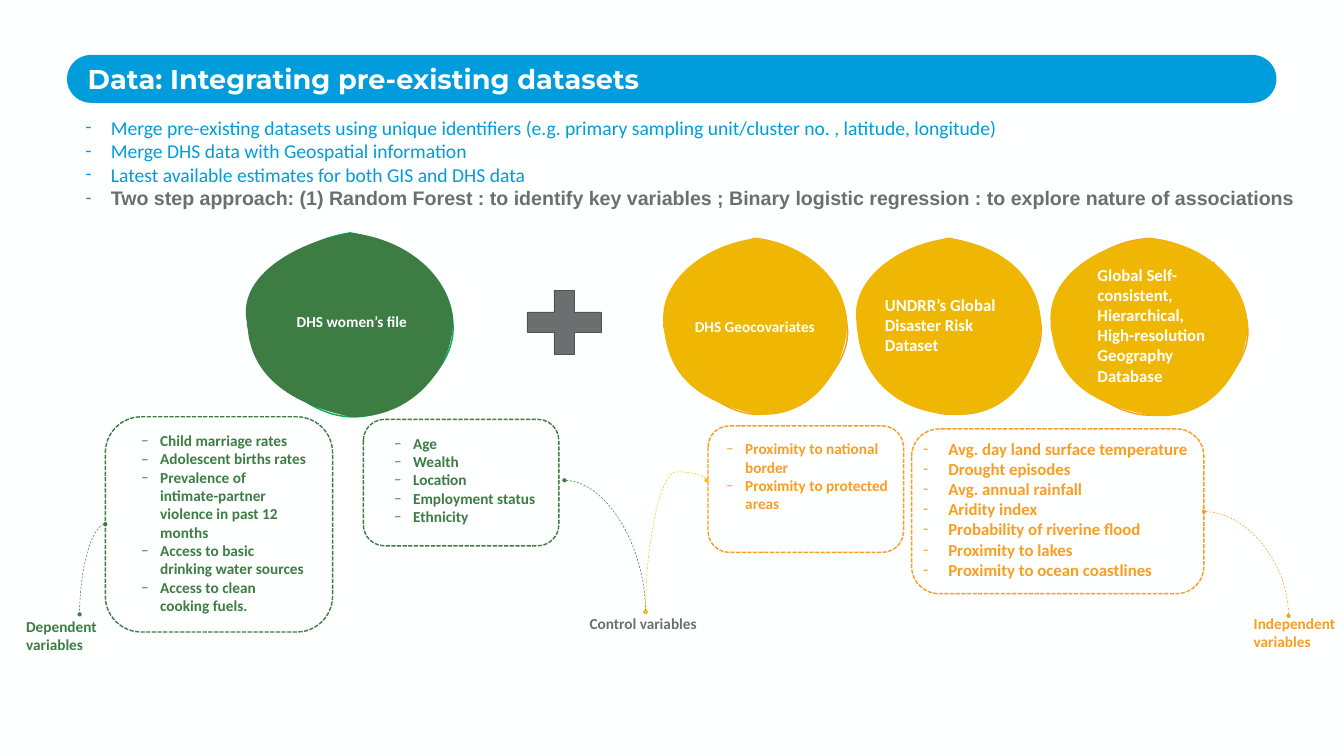
"""Build the slide on integrating survey and geospatial datasets."""
from dataclasses import dataclass
from typing import NamedTuple, Optional

import lxml.etree
import pptx
import pptx.dml.color
import pptx.enum.dml
import pptx.enum.shapes
import pptx.oxml.ns
import pptx.util

PX = 9144
SHAPES = pptx.enum.shapes.MSO_SHAPE
DASHES = pptx.enum.dml.MSO_LINE


@dataclass(frozen=True)
class Theme:
    white: str = "FEFFFF"
    blue: str = "009CDB"
    grey: str = "6D6E70"
    plus_edge: str = "525254"
    green: str = "3D7D43"
    green_edge: str = "00B050"
    yellow: str = "EFB703"
    orange: str = "FC9D23"
    gold: str = "FFC000"
    font: str = "Calibri"
    title: float = 38.8
    intro: float = 28
    large: float = 24
    label: float = 21.8


THEME = Theme()


class Box(NamedTuple):
    left: int
    top: int
    width: int
    height: int


class Style(NamedTuple):
    size: float
    color: str
    font: str = THEME.font
    bold: bool = True


class Bullet(NamedTuple):
    character: str
    margin: int
    hanging: int


class Line(NamedTuple):
    text: str
    style: Style


class TextBlock(NamedTuple):
    box: Box
    lines: tuple[Line, ...]
    bullet: Optional[Bullet] = None
    inset: tuple[int, int] = (10, 5)
    fill: Optional[str] = None


class Blob(NamedTuple):
    outline: tuple[tuple[int, int], ...]
    body: tuple[tuple[int, int], ...]
    fill: str
    edge: str
    label: TextBlock


class Panel(NamedTuple):
    box: Box
    color: str
    content: TextBlock


class Curve(NamedTuple):
    begin: tuple[int, int]
    end: tuple[int, int]
    color: str
    preset: str = "curvedConnector2"
    rotation: int = 0
    adjustment: Optional[int] = None


def lines(style: Style, *texts: str) -> tuple[Line, ...]:
    return tuple(Line(text, style) for text in texts)


GREEN_LABEL = Style(THEME.label, THEME.green)
ORANGE_LABEL = Style(THEME.label, THEME.orange)
WHITE_LABEL = Style(THEME.label, THEME.white)
WHITE_LARGE = Style(THEME.large, THEME.white)
INTRO = Style(THEME.intro, THEME.blue, bold=False)
EN_DASH = Bullet("–", 38, 38)

TITLE_BAR = Box(133, 109, 2400, 95)
PLUS_SIGN = Box(1019, 553, 201, 172)

TEXTS = (
    TextBlock(Box(174, 123, 2322, 65), lines(Style(THEME.title, THEME.white, "Montserrat"),
              "Data: Integrating pre-existing datasets"), inset=(0, 0)),
    TextBlock(Box(170, 229, 2438, 471), lines(INTRO,
              "Merge pre-existing datasets using unique identifiers (e.g. primary sampling unit/cluster no. , latitude, longitude)",
              "Merge DHS data with Geospatial information",
              "Latest available estimates for both GIS and DHS data")
              + lines(Style(THEME.intro, THEME.grey, "Arial"),
              "Two step approach: (1) Random Forest : to identify key variables ; Binary logistic regression : to explore nature of associations"),
              Bullet("-", 50, 50), (0, 0)),
    TextBlock(Box(42, 1219, 233, 84), lines(GREEN_LABEL, "Dependent variables")),
    TextBlock(Box(1160, 1214, 243, 47), lines(Style(THEME.label, THEME.grey), "Control variables")),
    TextBlock(Box(2478, 1213, 189, 84), lines(ORANGE_LABEL, "Independent variables")),
)

BLOBS = (
    Blob(((491, 644), (518, 545), (592, 478), (695, 462), (810, 483), (896, 553), (899, 644),
          (906, 737), (785, 832), (695, 827), (606, 824), (513, 731), (491, 644)),
         ((491, 644), (465, 544), (599, 477), (695, 462), (814, 474), (900, 556), (899, 644),
          (894, 737), (813, 832), (695, 827), (589, 804), (496, 754), (491, 644)),
         THEME.green, THEME.green_edge,
         TextBlock(Box(579, 615, 312, 53), lines(WHITE_LABEL, "DHS women’s file"), fill=THEME.green)),
    Blob(((1317, 647), (1336, 552), (1411, 494), (1499, 473), (1601, 484), (1677, 564), (1681, 647),
          (1694, 728), (1584, 826), (1499, 822), (1421, 819), (1337, 730), (1317, 647)),
         ((1317, 647), (1304, 551), (1409, 483), (1499, 473), (1605, 484), (1682, 559), (1681, 647),
          (1676, 735), (1610, 834), (1499, 822), (1405, 799), (1327, 763), (1317, 647)),
         THEME.yellow, THEME.orange,
         TextBlock(Box(1369, 624, 310, 47), lines(WHITE_LABEL, "DHS Geocovariates"), fill=THEME.yellow)),
    Blob(((1701, 647), (1709, 551), (1793, 490), (1883, 473), (1986, 489), (2059, 573), (2066, 647),
          (2072, 735), (1973, 824), (1883, 822), (1803, 819), (1722, 730), (1701, 647)),
         ((1701, 647), (1680, 552), (1792, 481), (1883, 473), (1991, 486), (2066, 553), (2066, 647),
          (2063, 740), (1996, 836), (1883, 822), (1784, 818), (1705, 751), (1701, 647)),
         THEME.yellow, THEME.orange,
         TextBlock(Box(1746, 580, 240, 131), lines(WHITE_LARGE, "UNDRR’s Global Disaster Risk Dataset"),
                   fill=THEME.yellow)),
    Blob(((2086, 649), (2111, 553), (2177, 479), (2281, 473), (2390, 483), (2470, 573), (2476, 649),
          (2485, 734), (2370, 829), (2281, 824), (2191, 822), (2105, 733), (2086, 649)),
         ((2086, 649), (2070, 552), (2182, 481), (2281, 473), (2393, 481), (2476, 562), (2476, 649),
          (2470, 737), (2401, 840), (2281, 824), (2179, 804), (2096, 765), (2086, 649)),
         THEME.yellow, THEME.orange,
         TextBlock(Box(2168, 520, 243, 257), lines(WHITE_LARGE,
                   "Global Self-consistent, Hierarchical, High-resolution Geography Database"), fill=THEME.yellow)),
)

PANELS = (
    Panel(Box(209, 827, 451, 427), THEME.green, TextBlock(Box(270, 851, 348, 377), lines(GREEN_LABEL,
          "Child marriage rates", "Adolescent births rates",
          "Prevalence of intimate-partner violence in past 12 months",
          "Access to basic drinking water sources", "Access to clean cooking fuels."), EN_DASH)),
    Panel(Box(721, 832, 388, 251), THEME.green, TextBlock(Box(772, 856, 348, 194), lines(GREEN_LABEL,
          "Age", "Wealth", "Location", "Employment status", "Ethnicity"), EN_DASH)),
    Panel(Box(1405, 845, 388, 251), THEME.orange, TextBlock(Box(1431, 867, 348, 157), lines(ORANGE_LABEL,
          "Proximity to national border", "Proximity to protected areas"), EN_DASH)),
    Panel(Box(1809, 851, 580, 327), THEME.orange, TextBlock(Box(1761, 865, 692, 293),
          lines(Style(THEME.large, THEME.orange),
          "Avg. day land surface temperature", "Drought episodes", "Avg. annual rainfall", "Aridity index",
          "Probability of riverine flood", "Proximity to lakes", "Proximity to ocean coastlines"),
          Bullet("-", 111, 50))),
)

CURVES = (
    Curve((209, 1040), (158, 1219), THEME.green),
    Curve((1120, 953), (1281, 1214), THEME.green),
    Curve((2389, 1015), (2557, 1222), THEME.orange),
    Curve((1211, 1023), (1472, 1144), THEME.gold, "curvedConnector3", 90, -6500),
)


def rgb(color: str) -> pptx.dml.color.RGBColor:
    return pptx.dml.color.RGBColor.from_string(color)


def emu(*lengths: int) -> tuple[int, ...]:
    return tuple(length * PX for length in lengths)


def add_child(parent, tag: str, **attributes: str):
    return lxml.etree.SubElement(parent, pptx.oxml.ns.qn(tag), attributes)


def paint(shape, fill: Optional[str] = None, edge: Optional[str] = None, width: float = 2) -> None:
    shape.shadow.inherit = False
    if fill:
        shape.fill.solid()
        shape.fill.fore_color.rgb = rgb(fill)
    else:
        shape.fill.background()
    if edge:
        shape.line.color.rgb = rgb(edge)
        shape.line.width = pptx.util.Pt(width)
    else:
        shape.line.fill.background()


def draw_text(slide, block: TextBlock) -> None:
    shape = slide.shapes.add_textbox(*emu(*block.box))
    if block.fill:
        paint(shape, block.fill)
    frame = shape.text_frame
    frame.word_wrap = True
    frame.margin_left, frame.margin_top = emu(*block.inset)
    frame.margin_right, frame.margin_bottom = emu(*block.inset)
    for index, line in enumerate(block.lines):
        paragraph = frame.add_paragraph() if index else frame.paragraphs[0]
        if block.bullet:
            properties = paragraph._p.get_or_add_pPr()
            properties.set("marL", str(block.bullet.margin * PX))
            properties.set("indent", str(-block.bullet.hanging * PX))
            add_child(properties, "a:buFont", typeface=THEME.font)
            add_child(properties, "a:buChar", char=block.bullet.character)
        run = paragraph.add_run()
        run.text = line.text
        run.font.name = line.style.font
        run.font.size = pptx.util.Pt(line.style.size)
        run.font.bold = line.style.bold
        run.font.color.rgb = rgb(line.style.color)


def draw_blob(slide, blob: Blob) -> None:
    anchors = blob.outline[::3]
    builder = slide.shapes.build_freeform(*anchors[0], scale=PX)
    builder.add_line_segments(anchors[1:], close=True)
    shape = builder.convert_to_shape()
    paint(shape, blob.fill, blob.edge)
    left, top = (min(axis) for axis in zip(*anchors))
    width, height = (str(max(axis) - min(axis)) for axis in zip(*anchors))
    contours = next(shape._element.iter(pptx.oxml.ns.qn("a:pathLst")))
    contours.clear()
    for points, visibility in ((blob.outline, {"fill": "none"}), (blob.body, {"stroke": "0"})):
        contour = add_child(contours, "a:path", w=width, h=height, **visibility)
        segments = [points[:1]] + [points[i:i + 3] for i in range(1, len(points), 3)]
        for index, segment in enumerate(segments):
            command = add_child(contour, "a:cubicBezTo" if index else "a:moveTo")
            for x, y in segment:
                add_child(command, "a:pt", x=str(x - left), y=str(y - top))
        add_child(contour, "a:close")
    draw_text(slide, blob.label)


def draw_panel(slide, panel: Panel) -> None:
    shape = slide.shapes.add_shape(SHAPES.ROUNDED_RECTANGLE, *emu(*panel.box))
    paint(shape, edge=panel.color)
    shape.line.dash_style = DASHES.SQUARE_DOT
    draw_text(slide, panel.content)


def draw_curve(slide, curve: Curve) -> None:
    connector = slide.shapes.add_connector(
        pptx.enum.shapes.MSO_CONNECTOR.CURVE, *emu(*curve.begin, *curve.end))
    connector.line.color.rgb = rgb(curve.color)
    connector.line.width = pptx.util.Pt(0.75)
    connector.line.dash_style = DASHES.DASH
    properties = connector._element.spPr
    properties.find(pptx.oxml.ns.qn("a:xfrm")).set("rot", str(curve.rotation * 60000))
    geometry = properties.find(pptx.oxml.ns.qn("a:prstGeom"))
    geometry.set("prst", curve.preset)
    if curve.adjustment is not None:
        guides = geometry.find(pptx.oxml.ns.qn("a:avLst"))
        add_child(guides, "a:gd", name="adj1", fmla=f"val {curve.adjustment}")
    outline = properties.find(pptx.oxml.ns.qn("a:ln"))
    for tag in ("a:headEnd", "a:tailEnd"):
        add_child(outline, tag, type="oval")
    add_child(properties, "a:effectLst")


def main() -> None:
    presentation = pptx.Presentation()
    presentation.slide_width, presentation.slide_height = emu(2667, 1500)
    slide = presentation.slides.add_slide(presentation.slide_layouts[6])
    slide.background.fill.solid()
    slide.background.fill.fore_color.rgb = rgb(THEME.white)
    bar = slide.shapes.add_shape(SHAPES.ROUNDED_RECTANGLE, *emu(*TITLE_BAR))
    bar.adjustments[0] = 0.5
    paint(bar, THEME.blue)
    plus = slide.shapes.add_shape(SHAPES.MATH_PLUS, *emu(*PLUS_SIGN))
    paint(plus, THEME.grey, THEME.plus_edge, 0.25)
    for draw, items in ((draw_text, TEXTS), (draw_blob, BLOBS), (draw_panel, PANELS), (draw_curve, CURVES)):
        for item in items:
            draw(slide, item)
    presentation.save("out.pptx")


if __name__ == "__main__":
    main()
